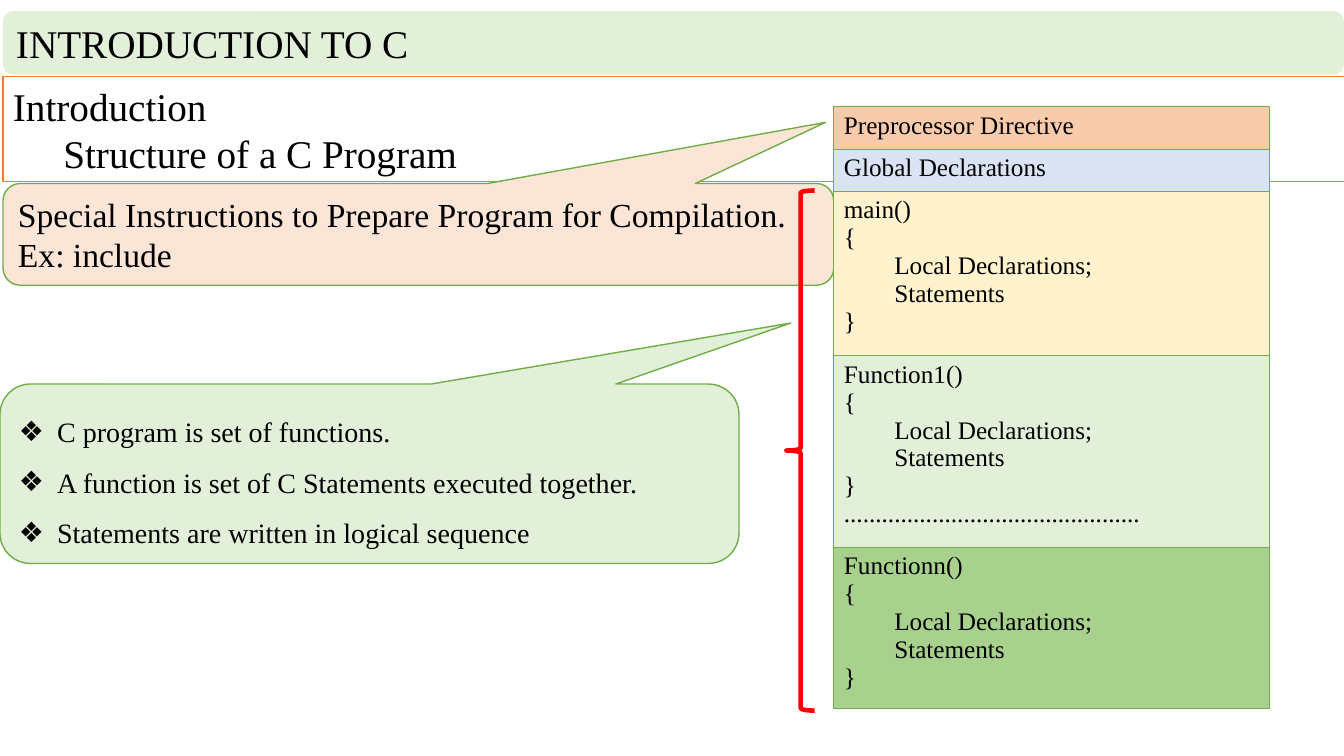
"""Slide on the structure of a C program: title, callouts and a layered program outline."""
import pptx
import pptx.dml.color
import pptx.enum.shapes
import pptx.enum.text
import pptx.oxml
import pptx.oxml.ns
import pptx.util

Inches = pptx.util.Inches
Pt = pptx.util.Pt
SHAPE = pptx.enum.shapes.MSO_SHAPE
GREEN = "70AD47"
PALE_GREEN = "E2F0D9"


def rgb(color):
    return pptx.dml.color.RGBColor.from_string(color)


def add_lines(tf, lines, size, spacing=None, bullet=None):
    tf.word_wrap = True
    for i, line in enumerate(lines):
        p = tf.paragraphs[0] if i == 0 else tf.add_paragraph()
        p.alignment = pptx.enum.text.PP_ALIGN.LEFT
        pPr = p._p.get_or_add_pPr()
        if spacing:
            p.line_spacing = spacing
        if line.startswith("\t"):
            p.level = 1
            pPr.set("marL", str(Inches(0.5)))
            pPr.set("indent", "0")
        if bullet:
            pPr.set("marL", str(Inches(0.38)))
            pPr.set("indent", str(-Inches(0.38)))
            font = pptx.oxml.parse_xml(f'<a:buFont {ns} typeface="Wingdings"/>')
            font.set("typeface", "Arial")
            pPr.append(font)
            pPr.append(pptx.oxml.parse_xml(f'<a:buChar {ns} char="{bullet}"/>'))
        r = p.add_run()
        r.text = line.strip()
        r.font.name = "Times New Roman"
        r.font.size = Pt(size)
        r.font.color.rgb = rgb("000000")


ns = pptx.oxml.ns.nsdecls("a")
prs = pptx.Presentation()
prs.slide_width = Inches(13.33)
prs.slide_height = Inches(7.5)
s = prs.slides.add_slide(prs.slide_layouts[6])

boxes = [
    (SHAPE.FLOWCHART_ALTERNATE_PROCESS, (0.03, 0.11, 13.3, 0.63), PALE_GREEN, None, 1,
     [], ["INTRODUCTION TO C"], 28, None, None),
    (SHAPE.RECTANGLE, (0.03, 0.76, 13.32, 1.04), "FFFFFF", "ED7D31", 1,
     [], ["Introduction", "\tStructure of a C Program"], 28, None, None),
    (SHAPE.ROUNDED_RECTANGULAR_CALLOUT, (0.03, 1.82, 8.24, 1.01), "FBE5D6", GREEN, 1,
     [0.49, -1.1, 0.17],
     ["Special Instructions to Prepare Program for Compilation.", "Ex: include"],
     24, None, None),
    (SHAPE.LEFT_BRACE, (7.8, 1.89, 0.28, 5.16), None, "FF0000", 3.25,
     [], [], 18, None, None),
    (SHAPE.ROUNDED_RECTANGULAR_CALLOUT, (0, 3.81, 7.33, 1.78), PALE_GREEN, GREEN, 1,
     [0.57, -0.84, 0.17],
     ["C program is set of functions.",
      "A function is set of C Statements executed together.",
      "Statements are written in logical sequence"], 20, 1.5, "❖"),
]
for kind, place, fill, line, width, adjust, lines, size, spacing, bullet in boxes:
    sp = s.shapes.add_shape(kind, *map(Inches, place))
    sp.shadow.inherit = False
    if fill:
        sp.fill.solid()
        sp.fill.fore_color.rgb = rgb(fill)
    else:
        sp.fill.background()
    if line:
        sp.line.color.rgb = rgb(line)
        sp.line.width = Pt(width)
    else:
        sp.line.fill.background()
    for i, value in enumerate(adjust):
        sp.adjustments[i] = value
    add_lines(sp.text_frame, lines, size, spacing, bullet)

body = ["{", "\tLocal Declarations;", "\tStatements", "}"]
sections = [
    (0.42, "F8CBAD", ["Preprocessor Directive"]),
    (0.42, "DAE3F3", ["Global Declarations"]),
    (1.63, "FFF2CC", ["main()"] + body),
    (1.9, PALE_GREEN, ["Function1()"] + body + ["." * 47]),
    (1.6, "A9D18E", ["Functionn()"] + body),
]
height = sum(section[0] for section in sections)
table = s.shapes.add_table(len(sections), 1, Inches(8.27), Inches(1.06),
                           Inches(4.32), Inches(height)).table
table.first_row = False
table.horz_banding = False
for row, (height, fill, lines) in enumerate(sections):
    table.rows[row].height = Inches(height)
    cell = table.cell(row, 0)
    cell.fill.solid()
    cell.fill.fore_color.rgb = rgb(fill)
    add_lines(cell.text_frame, lines, 18)
    tcPr = cell._tc.get_or_add_tcPr()
    for i, side in enumerate("LRTB"):
        tcPr.insert(i, pptx.oxml.parse_xml(
            f'<a:ln{side} {ns} w="{Pt(1)}"><a:solidFill><a:srgbClr val="{GREEN}"/>'
            f'</a:solidFill></a:ln{side}>'))

prs.save("out.pptx")
